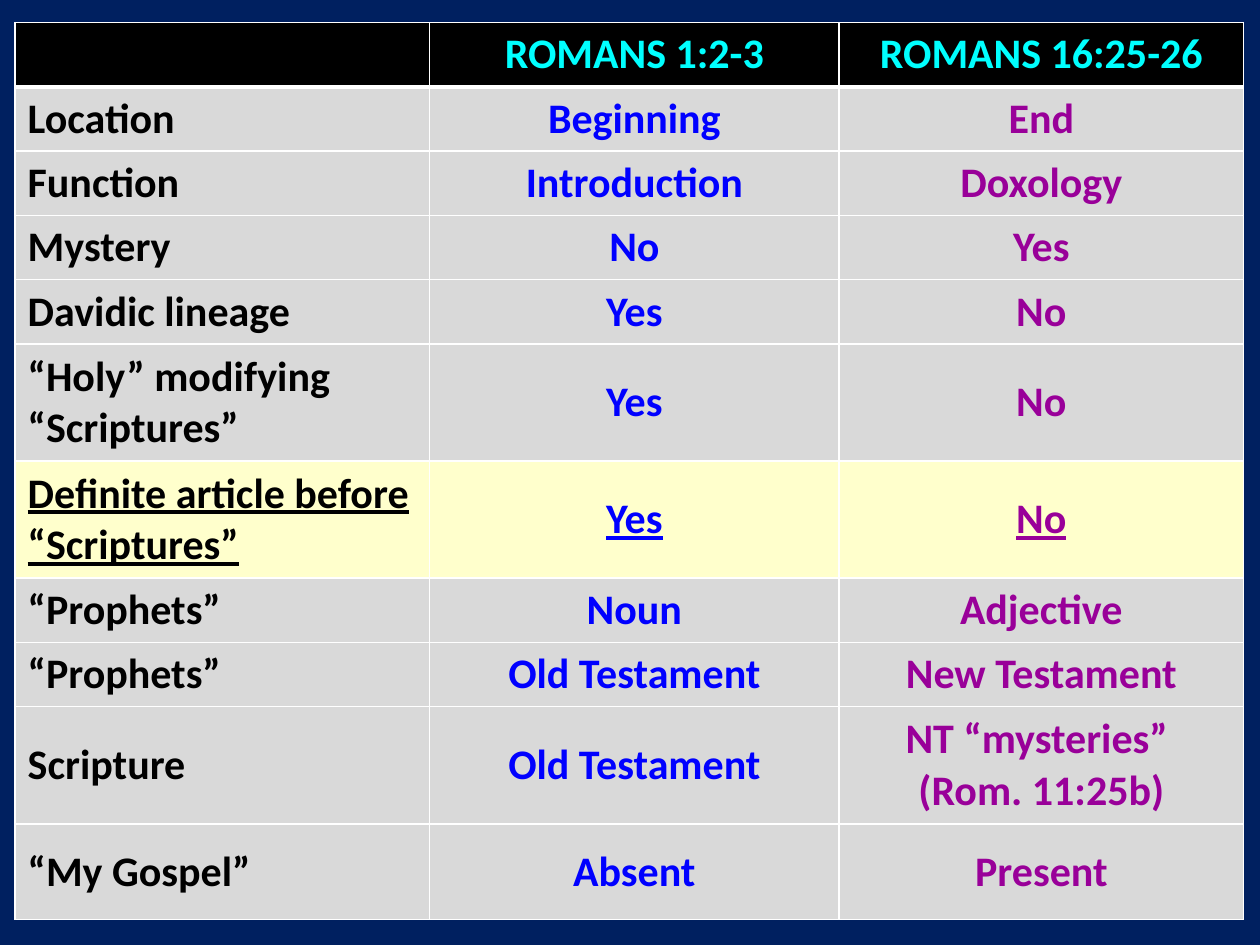
from lxml.etree import SubElement
from pptx import Presentation
from pptx.dml.color import RGBColor
from pptx.enum.text import MSO_ANCHOR as Anchor, PP_ALIGN as Align
from pptx.oxml.ns import qn
from pptx.util import Inches, Pt

COLORS = {
    "background": "002060",
    "header": "000000",
    "heading": "00FFFF",
    "topic": "000000",
    "opening": "0000FF",
    "closing": "990099",
    "row": "D9D9D9",
    "highlight": "FFFFCC",
    "border": "FFFFFF",
}
COLUMN_WIDTHS = [3.29, 3.25, 3.21]
COLUMN_COLORS = ["topic", "opening", "closing"]
SINGLE, DOUBLE, LAST = 0.51, 0.93, 0.76
HIGHLIGHTED = 6
COMPARISON = [
    (SINGLE, "", "ROMANS 1:2-3", "ROMANS 16:25-26"),
    (SINGLE, "Location", "Beginning", "End"),
    (SINGLE, "Function", "Introduction", "Doxology"),
    (SINGLE, "Mystery", "No", "Yes"),
    (SINGLE, "Davidic lineage", "Yes", "No"),
    (DOUBLE, "“Holy” modifying “Scriptures”", "Yes", "No"),
    (DOUBLE, "Definite article before “Scriptures”", "Yes", "No"),
    (SINGLE, "“Prophets”", "Noun", "Adjective"),
    (SINGLE, "“Prophets”", "Old Testament", "New Testament"),
    (DOUBLE, "Scripture", "Old Testament", "NT “mysteries” \n(Rom. 11:25b)"),
    (LAST, "“My Gospel”", "Absent", "Present"),
]


def rgb(name):
    """Return the palette colour with this name."""
    return RGBColor.from_string(COLORS[name])


def write_text(frame, text, color, align=Align.LEFT, underline=False):
    """Write each line of text as a bold paragraph."""
    frame.text = text
    for paragraph in frame.paragraphs:
        paragraph.alignment = align
        for run in paragraph.runs:
            font = run.font
            font.name, font.size, font.bold = "Calibri", Pt(24), True
            font.underline = underline
            font.color.rgb = rgb(color)


def add_borders(cell, top=1, bottom=1):
    """Draw solid borders round a cell, with widths in points."""
    properties = cell._tc.get_or_add_tcPr()
    for side, width in (("L", 1), ("R", 1), ("T", top), ("B", bottom)):
        line = SubElement(properties, qn(f"a:ln{side}"), w=str(Pt(width)))
        fill = SubElement(line, qn("a:solidFill"))
        SubElement(fill, qn("a:srgbClr"), val=COLORS["border"])


def fill_cell(cell, text, row, column):
    """Format one cell by its place in the comparison."""
    is_header, is_highlighted = row == 0, row == HIGHLIGHTED
    add_borders(cell, top=3 if row == 1 else 1, bottom=3 if is_header else 1)
    cell.fill.solid()
    background = "header" if is_header else "highlight" if is_highlighted else "row"
    cell.fill.fore_color.rgb = rgb(background)
    cell.vertical_anchor = Anchor.TOP if is_header else Anchor.MIDDLE
    write_text(
        cell.text_frame,
        text,
        color="heading" if is_header else COLUMN_COLORS[column],
        align=Align.CENTER if column else Align.LEFT,
        underline=is_highlighted,
    )


def add_comparison(slide):
    """Add the table that compares the two passages."""
    heights = [height for height, *_ in COMPARISON]
    table = slide.shapes.add_table(
        len(COMPARISON), len(COLUMN_WIDTHS), Inches(0.12), Inches(0.18),
        Inches(sum(COLUMN_WIDTHS)), Inches(sum(heights)),
    ).table
    for table_column, width in zip(table.columns, COLUMN_WIDTHS):
        table_column.width = Inches(width)
    for row, (height, *texts) in enumerate(COMPARISON):
        table.rows[row].height = Inches(height)
        for column, text in enumerate(texts):
            fill_cell(table.cell(row, column), text, row, column)


def main():
    """Build and save the slide."""
    presentation = Presentation()
    presentation.slide_width, presentation.slide_height = Inches(10), Inches(7.5)
    slide = presentation.slides.add_slide(presentation.slide_layouts[6])
    slide.background.fill.solid()
    slide.background.fill.fore_color.rgb = rgb("background")
    add_comparison(slide)
    presentation.save("out.pptx")


if __name__ == "__main__":
    main()
